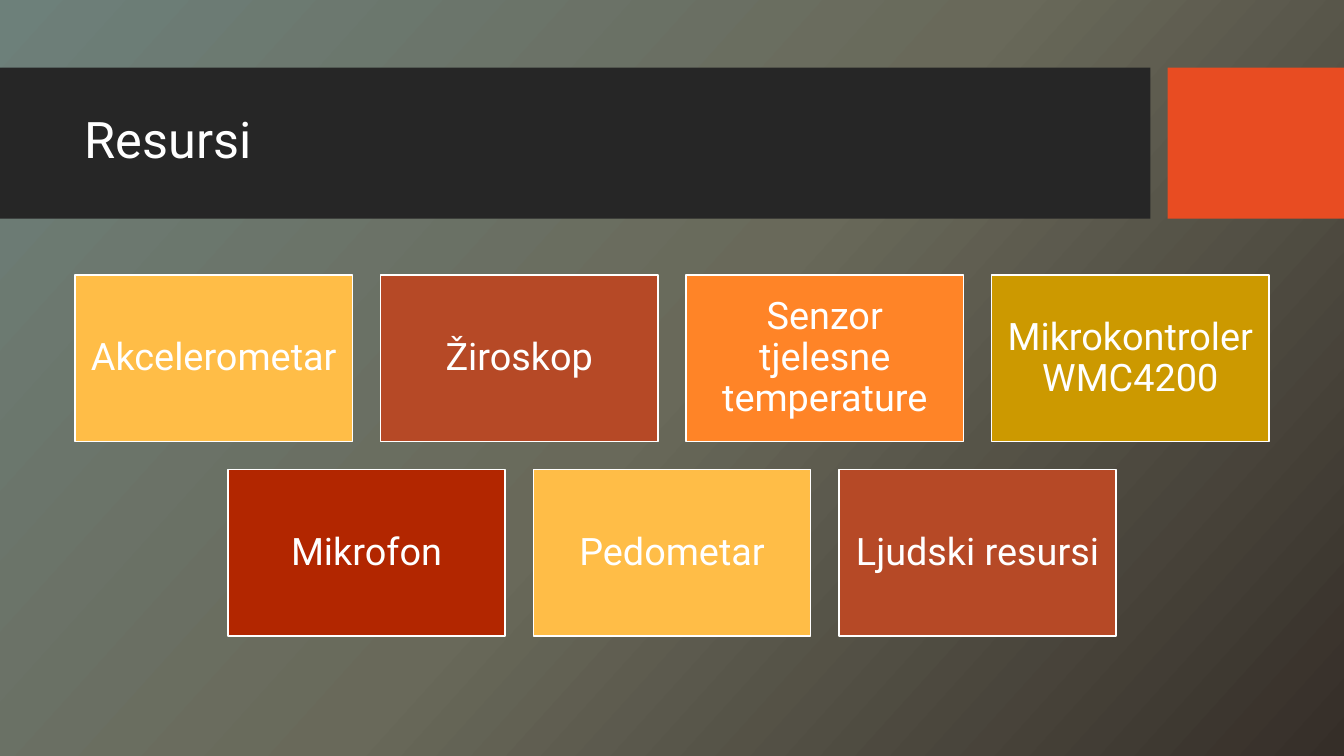
import copy

import pptx
import pptx.dml.color
import pptx.enum.shapes
import pptx.enum.text
import pptx.oxml.ns
import pptx.util

Inches = pptx.util.Inches
Pt = pptx.util.Pt

# Content
TITLE = "Resursi"
RESOURCE_ROWS = [
    [("Akcelerometar", "amber"), ("Žiroskop", "rust"),
     ("Senzor tjelesne temperature", "orange"),
     ("Mikrokontroler WMC4200", "gold")],
    [("Mikrofon", "red"), ("Pedometar", "amber"), ("Ljudski resursi", "rust")],
]
COLORS = {
    "white": "FFFFFF", "bar": "262626", "accent": "E84C22",
    "amber": "FFBD47", "rust": "B64926", "orange": "FF8427",
    "gold": "CC9900", "red": "B22600",
}
BACKGROUND_STOPS = [(0, "6D807A"), (0.5, "69695A"), (1, "352E28")]
FONT = "Roboto"

# Layout, in inches
SLIDE_WIDTH, SLIDE_HEIGHT = 13.33, 7.5
BAR_TOP, BAR_HEIGHT = 0.67, 1.5
CARD_WIDTH, CARD_HEIGHT = 2.75, 1.65
CARD_GAP = 0.28
CARDS_TOP = 2.73
CARD_INSET = 0.11


def rgb(name):
    return pptx.dml.color.RGBColor.from_string(COLORS[name])


def add_box(page, left, top, width, height, color):
    box = page.shapes.add_shape(
        pptx.enum.shapes.MSO_SHAPE.RECTANGLE,
        Inches(left), Inches(top), Inches(width), Inches(height))
    box.shadow.inherit = False
    box.fill.solid()
    box.fill.fore_color.rgb = rgb(color)
    box.line.fill.background()
    return box


def write(box, text, size, alignment):
    frame = box.text_frame
    frame.text = text
    frame.word_wrap = True
    frame.auto_size = pptx.enum.text.MSO_AUTO_SIZE.NONE
    frame.vertical_anchor = pptx.enum.text.MSO_ANCHOR.MIDDLE
    para = frame.paragraphs[0]
    para.alignment = alignment
    para.line_spacing = 0.9
    font = para.runs[0].font
    font.name = FONT
    font.size = Pt(size)
    font.color.rgb = rgb("white")


def paint_background(page):
    fill = page.background.fill
    fill.gradient()
    fill.gradient_angle = 318
    # A new gradient has two stops; add the middle one
    stop_list = page.element.find(".//" + pptx.oxml.ns.qn("a:gsLst"))
    stop_list.insert(1, copy.deepcopy(stop_list[0]))
    for stop, (position, color) in zip(fill.gradient_stops, BACKGROUND_STOPS):
        stop.position = position
        stop.color.rgb = pptx.dml.color.RGBColor.from_string(color)


def add_title(page):
    add_box(page, 0, BAR_TOP, 11.41, BAR_HEIGHT, "bar")
    add_box(page, 11.58, BAR_TOP, 1.75, BAR_HEIGHT, "accent")
    title = page.shapes.title
    title.left, title.top = Inches(0.74), Inches(0.82)
    title.width, title.height = Inches(10.51), Inches(1.18)
    write(title, TITLE, 36, pptx.enum.text.PP_ALIGN.LEFT)
    # Bring the title in front of the bar
    title.element.getparent().append(title.element)


def add_cards(page):
    for row, resources in enumerate(RESOURCE_ROWS):
        # Each row is centred on the slide
        count = len(resources)
        row_width = count * CARD_WIDTH + (count - 1) * CARD_GAP
        row_left = (SLIDE_WIDTH - row_width) / 2
        top = CARDS_TOP + row * (CARD_HEIGHT + CARD_GAP)
        for column, (name, color) in enumerate(resources):
            left = row_left + column * (CARD_WIDTH + CARD_GAP)
            card = add_box(page, left, top, CARD_WIDTH, CARD_HEIGHT, color)
            card.line.color.rgb = rgb("white")
            card.line.width = Pt(1)
            frame = card.text_frame
            frame.margin_left = frame.margin_right = Inches(CARD_INSET)
            frame.margin_top = frame.margin_bottom = Inches(CARD_INSET)
            write(card, name, 27, pptx.enum.text.PP_ALIGN.CENTER)


def main():
    deck = pptx.Presentation()
    deck.slide_width = Inches(SLIDE_WIDTH)
    deck.slide_height = Inches(SLIDE_HEIGHT)
    page = deck.slides.add_slide(deck.slide_layouts[5])
    paint_background(page)
    add_title(page)
    add_cards(page)
    deck.save("out.pptx")


if __name__ == "__main__":
    main()
